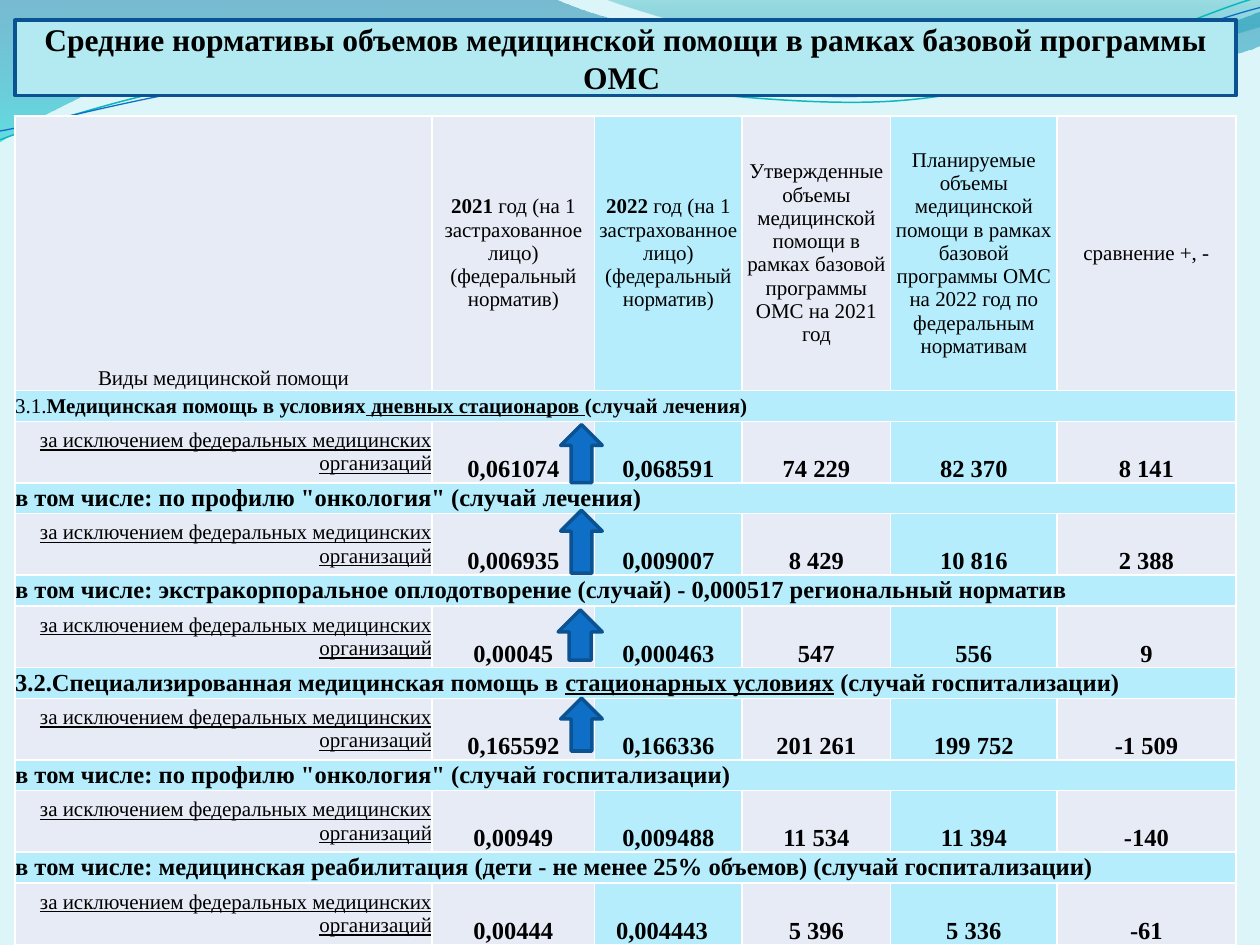
from lxml.etree import SubElement
from pptx import Presentation
from pptx.dml.color import RGBColor
from pptx.enum.shapes import MSO_SHAPE
from pptx.enum.text import MSO_ANCHOR, PP_ALIGN
from pptx.oxml.ns import qn
from pptx.util import Inches, Pt

FONT = "Times New Roman"
BLACK = RGBColor(0x00, 0x00, 0x00)
WHITE = RGBColor(0xFF, 0xFF, 0xFF)
PAGE = RGBColor(0xDB, 0xF5, 0xF9)
TITLE_FILL = RGBColor(0xB3, 0xEA, 0xF2)
OUTLINE = RGBColor(0x0B, 0x52, 0x92)
BLUE = RGBColor(0x0F, 0x6F, 0xC6)
TEAL = RGBColor(0x0A, 0xB8, 0xBF)
GREY = RGBColor(0xE7, 0xEB, 0xF5)
AQUA = RGBColor(0xB5, 0xED, 0xFD)
DEEP_BLUE = RGBColor(0x00, 0x74, 0xA1)
CYAN = RGBColor(0x00, 0xC6, 0xCF)
DEEP_TEAL = RGBColor(0x00, 0xA1, 0xA9)
SEA_BLUE = RGBColor(0x00, 0x8B, 0xBF)

# Each curve is a start point followed by cubic segments; two numbers make a straight line.
LEFT_WAVE = [(0, 0), (4.4, -0.01), (4.76, 0.17, 6.64, 0.63, 7.58, 0.63),
             (8.53, 0.63, 9.58, 0.26, 10, 0.09), (10.01, 0.36),
             (9.83, 0.44, 8.7, 0.76, 7.46, 0.75), (6.22, 0.75, 3.82, 0.28, 2.57, 0.34),
             (1.29, 0.36, 0.46, 0.83, -0.01, 1.13)]
RIGHT_WAVE = [(4.79, -0.01), (5.09, 0.11, 6.82, 0.62, 7.69, 0.65),
              (8.56, 0.69, 9.61, 0.32, 10, 0.21), (10, 0)]
TEAL_CURVE = [(0, 1.11), (0.48, 0.93, 1.58, 0.57, 2.77, 0.52),
              (3.95, 0.47, 5.93, 0.89, 7.13, 0.8), (8.33, 0.71, 9.38, 0.15, 9.98, -0.02)]
BLUE_CURVE = [(0, 1.04), (0.47, 0.96, 1.64, 0.61, 2.83, 0.56),
              (4.03, 0.51, 5.97, 0.84, 7.17, 0.75), (8.36, 0.67, 9.41, 0.21, 10, 0.06)]

COLUMNS = [3.31, 1.29, 1.17, 1.18, 1.32, 1.42]
TABLE_HEIGHT, HEADER_HEIGHT = 6.58, 2.18
YEAR_NOTE = "год (на 1 застрахованное лицо) (федеральный норматив)"
ROW_LABEL = "за исключением федеральных медицинских организаций"

# Runs are (text, style): "b" is bold, "u" is underlined.
HEADERS = [
    [("Виды медицинской помощи", "")],
    [("2021 ", "b"), (YEAR_NOTE, "")],
    [("2022 ", "b"), (YEAR_NOTE, "")],
    [("Утвержденные объемы медицинской помощи в рамках базовой программы ОМС на 2021 год", "")],
    [("Планируемые объемы медицинской помощи в рамках базовой программы ОМС "
      "на 2022 год по федеральным нормативам", "")],
    [("сравнение +, -", "")],
]
SECTIONS = [
    ([("3.1.", ""), ("Медицинская помощь в условиях", "b"),
      (" дневных стационаров ", "bu"), ("(случай лечения)", "b")],
     ["0,061074", "0,068591", "74 229", "82 370", "8 141"]),
    ([('в том числе: по профилю "онкология" (случай лечения)', "b")],
     ["0,006935", "0,009007", "8 429", "10 816", "2 388"]),
    ([("в том числе: экстракорпоральное оплодотворение (случай) - "
       "0,000517 региональный норматив", "b")],
     ["0,00045", "0,000463", "547", "556", "9"]),
    ([("3.2.Специализированная медицинская помощь в ", "b"),
      ("стационарных условиях", "bu"), (" (случай госпитализации)", "b")],
     ["0,165592", "0,166336", "201 261", "199 752", "-1 509"]),
    ([('в том числе: по профилю "онкология" (случай госпитализации)', "b")],
     ["0,00949", "0,009488", "11 534", "11 394", "-140"]),
    ([("в том числе: медицинская реабилитация (дети - не менее 25% объемов) "
       "(случай госпитализации)", "b")],
     ["0,00444", "0,004443", "5 396", "5 336", "-61"]),
]
# A section is a heading row and a value row twice as high.
SECTION_HEIGHT = (TABLE_HEIGHT - HEADER_HEIGHT) / len(SECTIONS) / 3
ARROWS = [(4.45, 3.37, 0.33, 0.46), (4.45, 4.05, 0.33, 0.5),
          (4.43, 4.84, 0.35, 0.4), (4.45, 5.54, 0.33, 0.42)]


def add_curve(slide, curve, close):
    """Join the end points with lines, then bend the cubic segments."""
    ends = [(Inches(segment[-2]), Inches(segment[-1])) for segment in curve]
    builder = slide.shapes.build_freeform(*ends[0])
    builder.add_line_segments(ends[1:], close=close)
    sp = builder.convert_to_shape()
    sp.shadow.inherit = False
    lines = list(sp.element.spPr.iter(qn("a:lnTo")))
    for line, segment in zip(lines, curve[1:]):
        if len(segment) == 6:
            line.tag = qn("a:cubicBezTo")
            for i in (0, 2):
                pt = SubElement(line, qn("a:pt"), x=str(Inches(segment[i]) - sp.left),
                                y=str(Inches(segment[i + 1]) - sp.top))
                line.insert(i // 2, pt)
    return sp


def add_wave(slide, curve, stops):
    """Fill a closed curve from top to bottom with (position, colour, opacity) stops."""
    sp = add_curve(slide, curve, True)
    sp.line.fill.background()
    sp.fill.gradient()
    sp.fill.gradient_angle = 270
    for stop, (position, color, _) in zip(sp.fill.gradient_stops, stops):
        stop.position = position
        stop.color.rgb = color
    for clr, (_, _, opacity) in zip(sp.element.spPr.iter(qn("a:srgbClr")), stops):
        SubElement(clr, qn("a:alpha"), val=str(opacity * 1000))


def add_background(slide):
    slide.background.fill.solid()
    slide.background.fill.fore_color.rgb = PAGE
    add_wave(slide, LEFT_WAVE, [(0, DEEP_BLUE, 45), (1, CYAN, 55)])
    add_wave(slide, RIGHT_WAVE, [(0, DEEP_TEAL, 30), (0.8, SEA_BLUE, 45)])
    for curve, color, width in ((TEAL_CURVE, TEAL, 0.85), (BLUE_CURVE, BLUE, 0.75)):
        sp = add_curve(slide, curve, False)
        sp.fill.background()
        sp.line.color.rgb = color
        sp.line.width = Pt(width)


def add_outlined(slide, kind, box, fill):
    sp = slide.shapes.add_shape(kind, *map(Inches, box))
    sp.shadow.inherit = False
    sp.fill.solid()
    sp.fill.fore_color.rgb = fill
    sp.line.color.rgb = OUTLINE
    sp.line.width = Pt(2)
    return sp


def write_runs(p, runs, size, align):
    p.alignment = align
    p.font.name = FONT
    p.font.size = Pt(size)
    p.font.color.rgb = BLACK
    for text, style in runs:
        r = p.add_run()
        r.text = text
        r.font.bold = "b" in style
        r.font.underline = "u" in style


def add_title(slide, box):
    tf = add_outlined(slide, MSO_SHAPE.RECTANGLE, box, TITLE_FILL).text_frame
    tf.word_wrap = True
    tf.vertical_anchor = MSO_ANCHOR.MIDDLE
    title = "Средние нормативы объемов медицинской помощи в рамках базовой программы ОМС "
    write_runs(tf.paragraphs[0], [(title, "b")], 18, PP_ALIGN.CENTER)


def style_cell(cell, fill):
    cell.margin_left = cell.margin_right = cell.margin_top = cell.margin_bottom = 0
    tcPr = cell._tc.get_or_add_tcPr()
    for side in ("lnL", "lnR", "lnT", "lnB"):
        ln = SubElement(tcPr, qn(f"a:{side}"), w=str(Pt(1)))
        SubElement(SubElement(ln, qn("a:solidFill")), qn("a:srgbClr"), val=str(WHITE))
    cell.fill.solid()
    cell.fill.fore_color.rgb = fill


def fill_cell(cell, runs, size, align=PP_ALIGN.CENTER, anchor=MSO_ANCHOR.MIDDLE):
    cell.vertical_anchor = anchor
    write_runs(cell.text_frame.paragraphs[0], runs, size, align)


def add_norms_table(slide, left, top):
    heights = [HEADER_HEIGHT] + [SECTION_HEIGHT, 2 * SECTION_HEIGHT] * len(SECTIONS)
    table = slide.shapes.add_table(len(heights), len(COLUMNS), Inches(left), Inches(top),
                                   Inches(sum(COLUMNS)), Inches(TABLE_HEIGHT)).table
    for column, width in zip(table.columns, COLUMNS):
        column.width = Inches(width)
    for i, (row, height) in enumerate(zip(table.rows, heights)):
        row.height = Inches(height)
        for j, cell in enumerate(row.cells):
            style_cell(cell, AQUA if i % 2 or j in (2, 4) else GREY)

    for j, runs in enumerate(HEADERS):
        fill_cell(table.cell(0, j), runs, 12,
                  anchor=MSO_ANCHOR.MIDDLE if j else MSO_ANCHOR.BOTTOM)
    for i, (heading, values) in enumerate(SECTIONS):
        row = 2 * i + 1
        section = table.cell(row, 0)
        section.merge(table.cell(row, len(COLUMNS) - 1))
        fill_cell(section, heading, 14 if i else 12, PP_ALIGN.LEFT)
        fill_cell(table.cell(row + 1, 0), [(ROW_LABEL, "u")], 12, PP_ALIGN.RIGHT)
        for j, value in enumerate(values, 1):
            fill_cell(table.cell(row + 1, j), [(value, "b")], 14, anchor=MSO_ANCHOR.BOTTOM)
    table.cell(len(heights) - 1, 2).margin_right = Inches(0.1)


def main():
    prs = Presentation()
    prs.slide_width, prs.slide_height = Inches(10), Inches(7.5)
    slide = prs.slides.add_slide(prs.slide_layouts[6])
    add_background(slide)
    add_norms_table(slide, 0.12, 0.92)
    add_title(slide, (0.12, 0.16, 9.69, 0.6))
    for box in ARROWS:
        add_outlined(slide, MSO_SHAPE.UP_ARROW, box, BLUE)
    prs.save("out.pptx")


if __name__ == "__main__":
    main()
